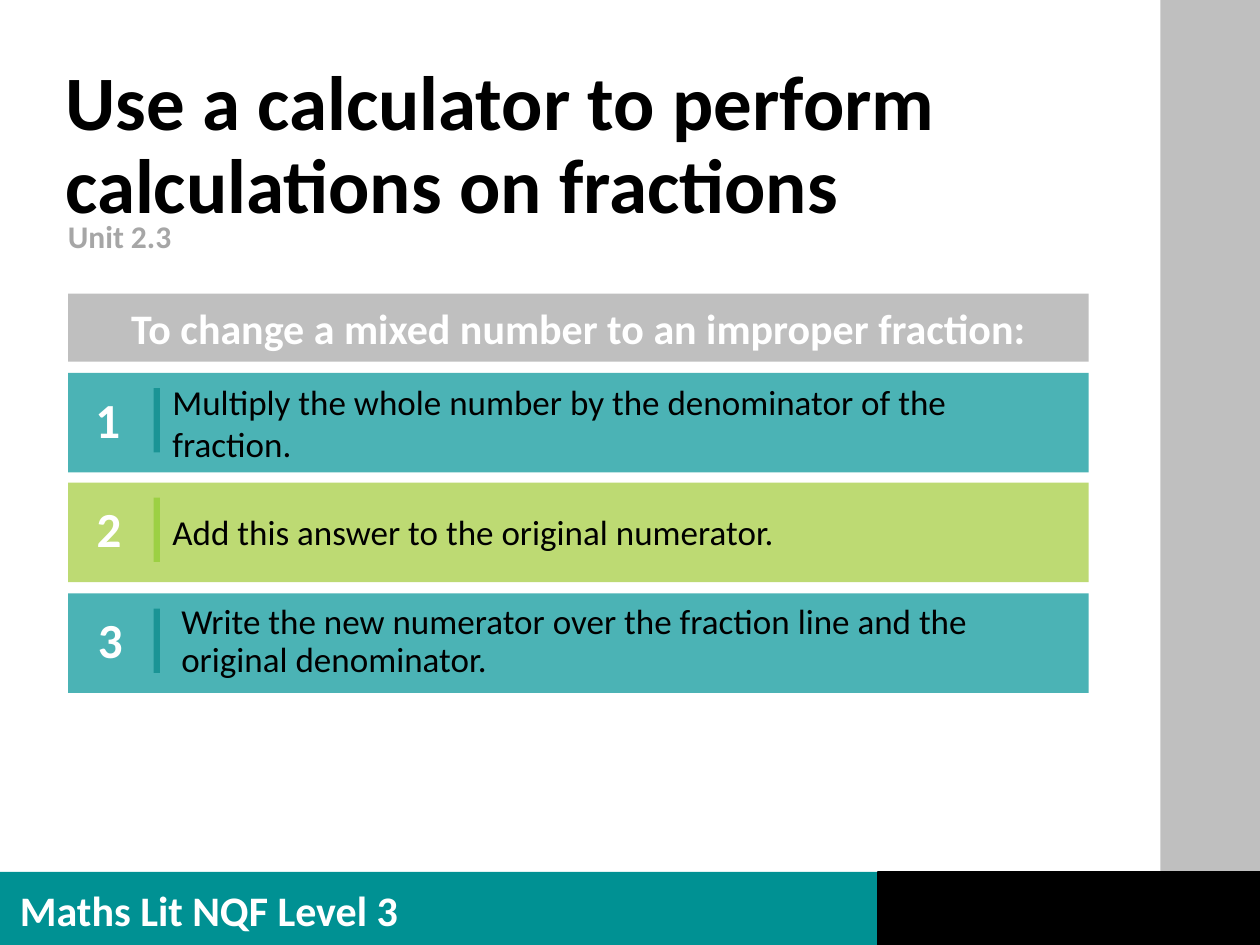
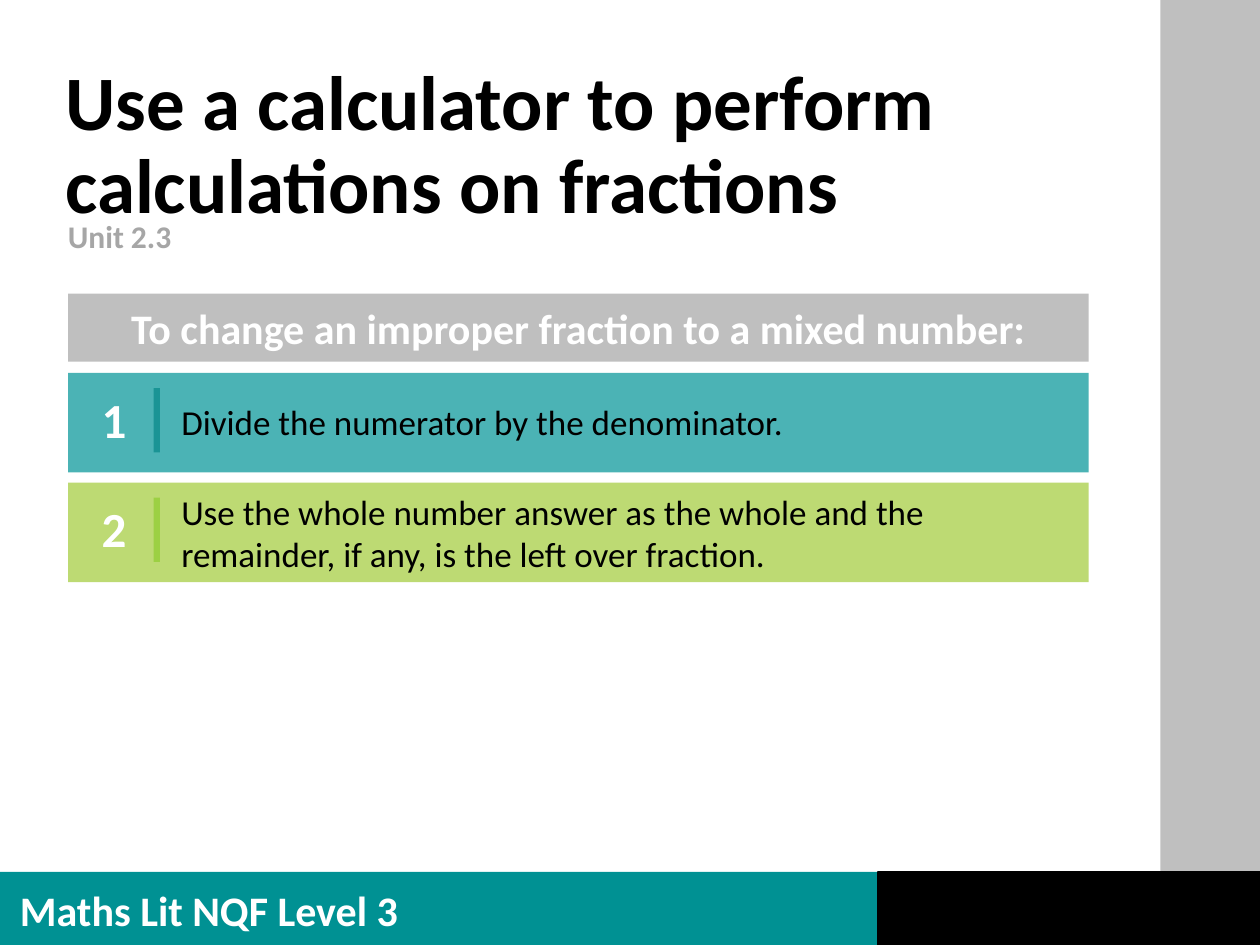
from dataclasses import dataclass

from pptx import Presentation
from pptx import util as u
from pptx.dml.color import RGBColor
from pptx.enum import shapes, text

SCALE = 9144
FONT = "Calibri"
WHITE = RGBColor(0xFF, 0xFF, 0xFF)
BLACK = RGBColor(0x00, 0x00, 0x00)
SILVER = RGBColor(0xBF, 0xBF, 0xBF)
GREY = RGBColor(0xA6, 0xA6, 0xA6)
DEEP_TEAL = RGBColor(0x00, 0x91, 0x93)
TEAL = RGBColor(0x4B, 0xB3, 0xB5)
TEAL_BAR = RGBColor(0x1A, 0x94, 0x95)
LIME = RGBColor(0xBD, 0xDA, 0x73)
LIME_BAR = RGBColor(0x9C, 0xD0, 0x43)
ROW_COLOURS = [(TEAL, TEAL_BAR), (LIME, LIME_BAR)]

LEFT, WIDTH = 54, 810
ROW_TOP, ROW_HEIGHT = 296, 79
TWO_ROW_PITCH = 175
BAR_LEFT = 122


@dataclass(frozen=True)
class Box:
    x: int
    y: int
    w: int
    h: int

    def emu(self) -> list[u.Emu]:
        return [u.Emu(n * SCALE) for n in (self.x, self.y, self.w, self.h)]


@dataclass(frozen=True)
class Style:
    size: int
    color: RGBColor
    bold: bool = True
    align: text.PP_ALIGN = text.PP_ALIGN.LEFT
    spacing: float = 1.0


@dataclass(frozen=True)
class Step:
    wording: str
    number_x: int
    x: int
    w: int
    h: int
    spacing: float = 1.0


@dataclass(frozen=True)
class Method:
    heading: str
    steps: list[Step]


TITLE = Style(44, BLACK, spacing=0.9)
UNIT = Style(18, GREY, spacing=0.9)
FOOTER = Style(24, WHITE)
HEADING = Style(24, WHITE, align=text.PP_ALIGN.CENTER)
NUMBER = Style(28, WHITE, align=text.PP_ALIGN.CENTER)

METHODS = [
    Method("To change a mixed number to an improper fraction:", [
        Step("Multiply the whole number by the denominator of the fraction.",
             52, 127, 727, 77),
        Step("Add this answer to the original numerator.", 53, 127, 681, 44),
        Step("Write the new numerator over the fraction line and the "
             "original denominator.", 54, 134, 681, 71, 0.9),
    ]),
    Method("To change an improper fraction to a mixed number:", [
        Step("Divide the numerator by the denominator.", 57, 134, 681, 44),
        Step("Use the whole number answer as the whole and the remainder, "
             "if any, is the left over fraction.", 57, 134, 681, 77),
    ]),
]


def write(sp, wording: str, style: Style, anchor: text.MSO_ANCHOR) -> None:
    tf = sp.text_frame
    tf.word_wrap = True
    tf.vertical_anchor = anchor
    p = tf.paragraphs[0]
    p.alignment = style.align
    p.line_spacing = style.spacing
    r = p.add_run()
    r.text = wording
    r.font.name = FONT
    r.font.size = u.Pt(style.size)
    r.font.bold = style.bold
    r.font.color.rgb = style.color


def add_text(s, box: Box, wording: str, style: Style) -> None:
    sp = s.shapes.add_textbox(*box.emu())
    write(sp, wording, style, text.MSO_ANCHOR.TOP)


def add_rect(s, box: Box, color: RGBColor):
    sp = s.shapes.add_shape(shapes.MSO_SHAPE.RECTANGLE, *box.emu())
    sp.shadow.inherit = False
    sp.fill.solid()
    sp.fill.fore_color.rgb = color
    sp.line.fill.background()
    return sp


def add_frame(s) -> None:
    add_rect(s, Box(921, 0, 79, 749), SILVER)
    add_rect(s, Box(0, 692, 1000, 59), DEEP_TEAL)
    sp = add_rect(s, Box(697, 692, 303, 58), BLACK)
    sp.line.color.rgb = BLACK
    sp.line.width = u.Pt(1)
    add_text(s, Box(6, 697, 375, 50), "Maths Lit NQF Level 3", FOOTER)
    add_text(s, Box(42, 46, 865, 79),
             "Use a calculator to perform calculations on fractions", TITLE)
    add_text(s, Box(44, 171, 865, 33), "Unit 2.3", UNIT)


def add_step(s, index: int, step: Step) -> None:
    y = ROW_TOP + index * TWO_ROW_PITCH // 2
    fill, bar = ROW_COLOURS[index % len(ROW_COLOURS)]
    add_rect(s, Box(LEFT, y, WIDTH, ROW_HEIGHT), fill)
    add_text(s, Box(step.number_x, y + 8, 67, 57), str(index + 1), NUMBER)
    add_text(s, Box(step.x, y + (ROW_HEIGHT - step.h) // 2, step.w, step.h),
             step.wording, Style(20, BLACK, bold=False, spacing=step.spacing))
    add_rect(s, Box(BAR_LEFT, y + 12, 5, 51), bar)


def add_method(prs, method: Method) -> None:
    s = prs.slides.add_slide(prs.slide_layouts[6])
    add_frame(s)
    sp = add_rect(s, Box(LEFT, 233, WIDTH, 54), SILVER)
    write(sp, method.heading, HEADING, text.MSO_ANCHOR.MIDDLE)
    for index, step in enumerate(method.steps):
        add_step(s, index, step)


def main() -> None:
    prs = Presentation()
    prs.slide_width = u.Emu(1000 * SCALE)
    prs.slide_height = u.Emu(750 * SCALE)
    for method in METHODS:
        add_method(prs, method)
    prs.save("out.pptx")


if __name__ == "__main__":
    main()
